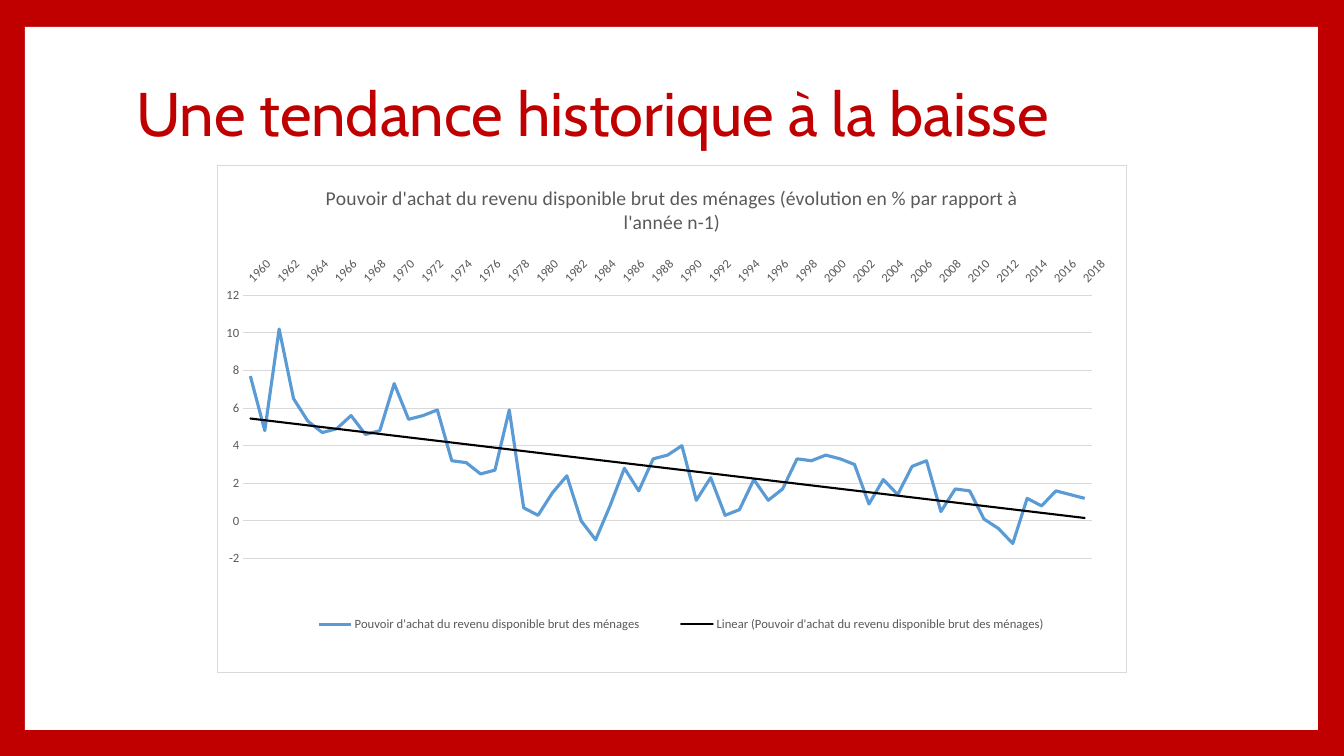
from lxml import etree
from pptx import Presentation
from pptx.chart.data import CategoryChartData
from pptx.dml.color import RGBColor
from pptx.enum.chart import XL_CHART_TYPE as ChartType
from pptx.enum.chart import XL_LEGEND_POSITION as LegendPosition
from pptx.enum.chart import XL_TICK_LABEL_POSITION as LabelPosition
from pptx.enum.chart import XL_TICK_MARK as TickMark
from pptx.enum.shapes import MSO_SHAPE as ShapeKind
from pptx.enum.text import MSO_ANCHOR as Anchor
from pptx.enum.text import PP_ALIGN as Align
from pptx.oxml import parse_xml
from pptx.oxml.ns import nsdecls, qn
from pptx.util import Pt

SLIDE_WIDTH, SLIDE_HEIGHT = 1344, 756
EMU_PER_PX = 12192000 / SLIDE_WIDTH
COLORS = {"red": "C00000", "white": "FFFFFF", "gray": "D9D9D9",
          "text": "595959", "blue": "5B9BD5", "black": "000000"}
SERIES_NAME = "Pouvoir d'achat du revenu disponible brut des ménages"
CHART_TITLE = SERIES_NAME + " (évolution en % par rapport à l'année n-1)"
FIRST_YEAR = 1960
GROWTH = [
    7.7, 4.8, 10.2, 6.5, 5.3, 4.7, 4.9, 5.6, 4.6, 4.8,
    7.3, 5.4, 5.6, 5.9, 3.2, 3.1, 2.5, 2.7, 5.9, 0.7,
    0.3, 1.5, 2.4, 0, -1, 0.8, 2.8, 1.6, 3.3, 3.5,
    4, 1.1, 2.3, 0.3, 0.6, 2.2, 1.1, 1.7, 3.3, 3.2,
    3.5, 3.3, 3, 0.9, 2.2, 1.4, 2.9, 3.2, 0.5, 1.7,
    1.6, 0.1, -0.4, -1.2, 1.2, 0.8, 1.6, 1.4, 1.2,
]


def px(value):
    return round(value * EMU_PER_PX)


def box(*lengths):
    return [px(length) for length in lengths]


def color(name):
    return RGBColor.from_string(COLORS[name])


def style_font(font, name, size, color_name):
    font.name = name
    font.size = Pt(size)
    font.bold = False
    font.color.rgb = color(color_name)


def style_line(line, color_name, width):
    line.color.rgb = color(color_name)
    line.width = Pt(width)


def chart_xml(tag, content):
    return parse_xml(f'<c:{tag} {nsdecls("c", "a")}>{content}</c:{tag}>')


def line_xml(color_name, width):
    return (f'<a:ln w="{Pt(width)}" cap="rnd"><a:solidFill>'
            f'<a:srgbClr val="{COLORS[color_name]}"/></a:solidFill></a:ln>')


def layout_xml(x, y, width, height):
    return chart_xml("layout", (
        '<c:manualLayout><c:xMode val="edge"/><c:yMode val="edge"/>'
        f'<c:x val="{x}"/><c:y val="{y}"/>'
        f'<c:w val="{width}"/><c:h val="{height}"/></c:manualLayout>'))


def add_panel(slide):
    panel = slide.shapes.add_shape(ShapeKind.RECTANGLE, *box(25, 27, 1293, 703))
    panel.shadow.inherit = False
    panel.fill.solid()
    panel.fill.fore_color.rgb = color("white")
    panel.line.fill.background()
    slide.shapes._spTree.insert(2, panel._element)


def set_title(slide, text):
    title = slide.shapes.title
    title.left, title.top, title.width, title.height = box(126, 68, 1091, 98)
    title.text_frame.text = text
    title.text_frame.vertical_anchor = Anchor.MIDDLE
    paragraph = title.text_frame.paragraphs[0]
    paragraph.alignment = Align.LEFT
    paragraph.line_spacing = 0.9
    style_font(paragraph.font, "Cabin", 44, "red")


def style_axes(chart):
    category_axis, value_axis = chart.category_axis, chart.value_axis
    for axis in (category_axis, value_axis):
        axis.major_tick_mark = axis.minor_tick_mark = TickMark.NONE
        style_font(axis.tick_labels.font, "Calibri", 9, "text")
    category_axis.tick_label_position = LabelPosition.HIGH
    category_axis.has_major_gridlines = False
    style_line(category_axis.format.line, "gray", 0.75)
    body = category_axis._element.find(qn("c:txPr")).find(qn("a:bodyPr"))
    body.set("rot", "-2700000")
    value_axis.minimum_scale, value_axis.maximum_scale = -2, 12
    value_axis.major_unit = 2
    value_axis.format.line.fill.background()
    style_line(value_axis.major_gridlines.format.line, "gray", 0.75)


def style_series(series):
    series.smooth = False
    style_line(series.format.line, "blue", 2.25)
    trend = chart_xml("trendline", (
        f'<c:spPr>{line_xml("black", 1.5)}</c:spPr>'
        '<c:trendlineType val="linear"/>'
        '<c:dispRSqr val="0"/><c:dispEq val="0"/>'))
    series._element.find(qn("c:cat")).addprevious(trend)


def style_legend(chart):
    chart.has_legend = True
    legend = chart.legend
    legend.position = LegendPosition.RIGHT
    legend.include_in_layout = False
    style_font(legend.font, "Calibri", 9, "text")
    element = legend._element
    for layout in element.findall(qn("c:layout")):
        element.remove(layout)
    element.find(qn("c:legendPos")).addnext(layout_xml(0.07, 0.85, 0.88, 0.11))


def style_frame(chart):
    space = chart._chartSpace
    frame = chart_xml("spPr", (
        f'<a:solidFill><a:srgbClr val="{COLORS["white"]}"/></a:solidFill>'
        + line_xml("gray", 0.75)))
    space.find(qn("c:chart")).addnext(frame)
    plot_area = next(space.iter(qn("c:plotArea")))
    for layout in plot_area.findall(qn("c:layout")):
        plot_area.remove(layout)
    plot_area.insert(0, layout_xml(0.01, 0.18, 0.97, 0.61))


def add_growth_chart(slide):
    data = CategoryChartData()
    data.categories = [str(FIRST_YEAR + i) for i in range(len(GROWTH))]
    data.add_series(SERIES_NAME, GROWTH)
    chart = slide.shapes.add_chart(
        ChartType.LINE, *box(217, 165, 910, 508), data).chart
    style_font(chart.font, "Calibri", 10, "black")
    chart.has_title = True
    chart.chart_title.include_in_layout = False
    chart.chart_title.text_frame.text = CHART_TITLE
    paragraph = chart.chart_title.text_frame.paragraphs[0]
    style_font(paragraph.font, "Calibri", 14, "text")
    chart.plots[0].vary_by_categories = False
    style_axes(chart)
    style_series(chart.plots[0].series[0])
    style_legend(chart)
    style_frame(chart)


def main():
    presentation = Presentation()
    presentation.slide_width, presentation.slide_height = box(
        SLIDE_WIDTH, SLIDE_HEIGHT)
    slide = presentation.slides.add_slide(presentation.slide_layouts[5])
    slide.background.fill.solid()
    slide.background.fill.fore_color.rgb = color("red")
    add_panel(slide)
    set_title(slide, "Une tendance historique à la baisse")
    add_growth_chart(slide)
    presentation.save("out.pptx")


if __name__ == "__main__":
    main()
